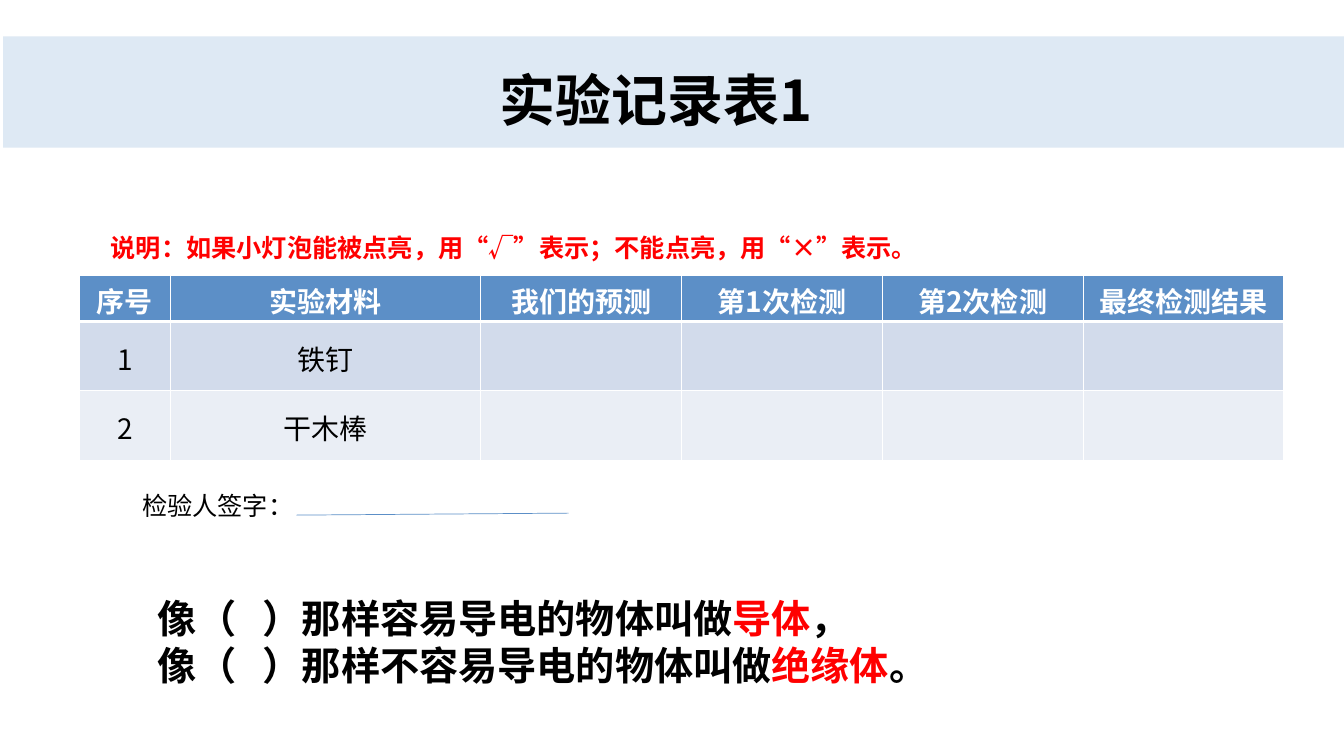
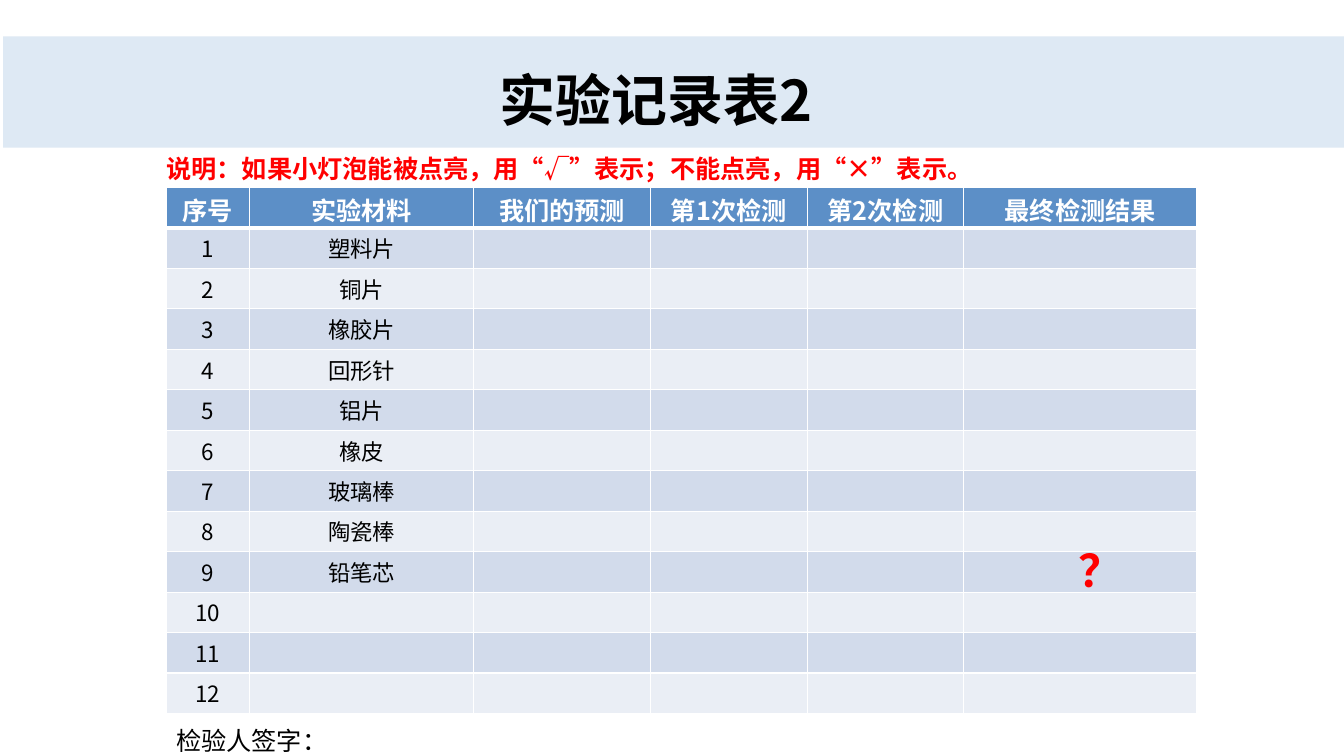
from dataclasses import dataclass

from lxml import etree
from pptx import Presentation
from pptx.dml.color import RGBColor
from pptx.enum import shapes, text
from pptx.oxml import ns
from pptx.util import Cm, Pt


@dataclass(frozen=True)
class Theme:
    # Colours
    band: str = "DEE9F4"
    head: str = "5C8FC7"
    odd: str = "D2DBEB"
    even: str = "EAEEF5"
    ink: str = "000000"
    red: str = "FF0000"
    white: str = "FFFFFF"
    # Fonts
    font: str = "Noto Sans CJK SC"
    plain: str = "Arial"
    # Type sizes
    title: int = 40
    mark: int = 32
    large: int = 28
    note: int = 18


T = Theme()
HEADS = ["序号", "实验材料", "我们的预测", "第1次检测", "第2次检测", "最终检测结果"]
NOTE = "说明：如果小灯泡能被点亮，用“√”表示；不能点亮，用“×”表示。"
SIGN = "检验人签字："


def rgb(tone):
    return RGBColor.from_string(tone)


def box(left, top, width, height):
    return Cm(left), Cm(top), Cm(width), Cm(height)


# Text
def add_run(para, words, size, tone=T.ink, bold=True, font=T.font):
    run = para.add_run()
    run.text = words
    face = run.font
    face.size, face.bold, face.name = Pt(size), bold, font
    face.color.rgb = rgb(tone)
    latin = run._r.rPr.find(ns.qn("a:latin"))
    latin.addnext(etree.Element(ns.qn("a:ea"), typeface=T.font))


def add_text(slide, place, lines, size, grow=True, align=None, **style):
    """Each line is a list of (words, colour) runs."""
    frame = slide.shapes.add_textbox(*box(*place)).text_frame
    frame.word_wrap = True
    if grow:
        frame.auto_size = text.MSO_AUTO_SIZE.SHAPE_TO_FIT_TEXT
    for i, line in enumerate(lines):
        para = frame.add_paragraph() if i else frame.paragraphs[0]
        para.alignment = align
        for words, tone in line:
            add_run(para, words, size, tone, **style)


def add_note(slide, left, top, width):
    add_text(slide, (left, top, width, 1.02), [[(NOTE, T.red)]], T.note)


def add_sign(slide, left, top):
    add_text(slide, (left, top, 17.7, 1.02), [[(SIGN, T.ink)]], T.note,
             bold=False, font=T.plain)


# Slide with band and title
def add_page(deck, words):
    slide = deck.slides.add_slide(deck.slide_layouts[5])
    band = slide.shapes.add_shape(shapes.MSO_SHAPE.RECTANGLE,
                                  *box(0.08, 0.92, 33.79, 2.8))
    band.shadow.inherit = False
    band.fill.solid()
    band.fill.fore_color.rgb = rgb(T.band)
    band.line.fill.background()

    title = slide.shapes.title
    band._element.getparent().insert(2, band._element)  # behind the title
    title.left, title.top, title.width, title.height = box(12.34, 1.52, 8.74, 1.96)
    frame = title.text_frame
    frame.word_wrap = False
    frame.auto_size = text.MSO_AUTO_SIZE.NONE
    frame.vertical_anchor = text.MSO_ANCHOR.TOP
    para = frame.paragraphs[0]
    para.alignment = text.PP_ALIGN.LEFT
    add_run(para, words, T.title)
    return slide


# Table
def set_edges(cell, top, base):
    props = cell._tc.get_or_add_tcPr()
    for side, width in (("L", 1), ("R", 1), ("T", top), ("B", base)):
        edge = etree.SubElement(props, ns.qn("a:ln" + side), w=str(Pt(width)))
        fill = etree.SubElement(edge, ns.qn("a:solidFill"))
        etree.SubElement(fill, ns.qn("a:srgbClr"), val=T.white)


def fill_cell(cell, words, row, size, anchor):
    head = row == 0
    set_edges(cell, 3 if row == 1 else 1, 3 if head else 1)
    cell.fill.solid()
    cell.fill.fore_color.rgb = rgb(T.head if head else T.odd if row % 2 else T.even)
    cell.vertical_anchor = anchor
    cell.margin_top, cell.margin_bottom = Cm(0.1), 0
    para = cell.text_frame.paragraphs[0]
    para.alignment = text.PP_ALIGN.CENTER
    if words:
        add_run(para, words, size, T.white if head else T.ink, head)


def add_grid(slide, left, top, cols, rows, items, sizes, anchor):
    """Number the items; sizes are those of the header and the body."""
    grid = slide.shapes.add_table(
        len(rows), len(cols), *box(left, top, sum(cols), sum(rows))).table
    for col, width in zip(grid.columns, cols):
        col.width = Cm(width)
    for row, height in zip(grid.rows, rows):
        row.height = Cm(height)
    data = [HEADS] + [[str(n), item] + [""] * (len(cols) - 2)
                      for n, item in enumerate(items, 1)]
    for r, line in enumerate(data):
        for c, words in enumerate(line):
            fill_cell(grid.cell(r, c), words, r, sizes[min(r, 1)], anchor)


def add_line(slide, start, end):
    line = slide.shapes.add_connector(
        shapes.MSO_CONNECTOR.STRAIGHT, *box(*start, *end))
    line.line.color.rgb = rgb(T.head)
    line.line.width = Pt(0.5)
    etree.SubElement(line._element.spPr, ns.qn("a:effectLst"))


# Slides
def first(deck):
    slide = add_page(deck, "实验记录表1")
    add_note(slide, 2.54, 5.72, 29.8)
    add_grid(slide, 2, 6.95, [2.3, 7.82] + [5.06] * 4, [1.15, 1.75, 1.75],
             ["铁钉", "干木棒"], (20, 20), text.MSO_ANCHOR.MIDDLE)
    add_text(slide, (3.73, 14.86, 25.65, 2.64), [
        [("像（   ）那样容易导电的物体叫做", T.ink), ("导体", T.red), ("，", T.ink)],
        [("像（   ）那样不容易导电的物体叫做", T.ink), ("绝缘体", T.red), ("。", T.ink)],
    ], T.large)
    add_sign(slide, 3.33, 12.24)
    add_line(slide, (7.47, 12.98), (14.33, 12.93))


def second(deck):
    slide = add_page(deck, "实验记录表2")
    add_note(slide, 3.94, 3.73, 21)
    items = ["塑料片", "铜片", "橡胶片", "回形针", "铝片", "橡皮",
             "玻璃棒", "陶瓷棒", "铅笔芯", "", "", ""]
    add_grid(slide, 4.19, 4.72, [2.1, 5.65, 4.45, 3.95, 3.95, 5.87],
             [1.02] * (len(items) + 1), items, (18, 16), text.MSO_ANCHOR.TOP)
    add_text(slide, (26.92, 13.54, 1.27, 0.81), [[("？", T.red)]], T.mark,
             grow=False, align=text.PP_ALIGN.CENTER)
    add_sign(slide, 4.19, 18.14)


def main():
    deck = Presentation()
    deck.slide_width, deck.slide_height = Cm(33.87), Cm(19.05)
    first(deck)
    second(deck)
    deck.save("out.pptx")


if __name__ == "__main__":
    main()
